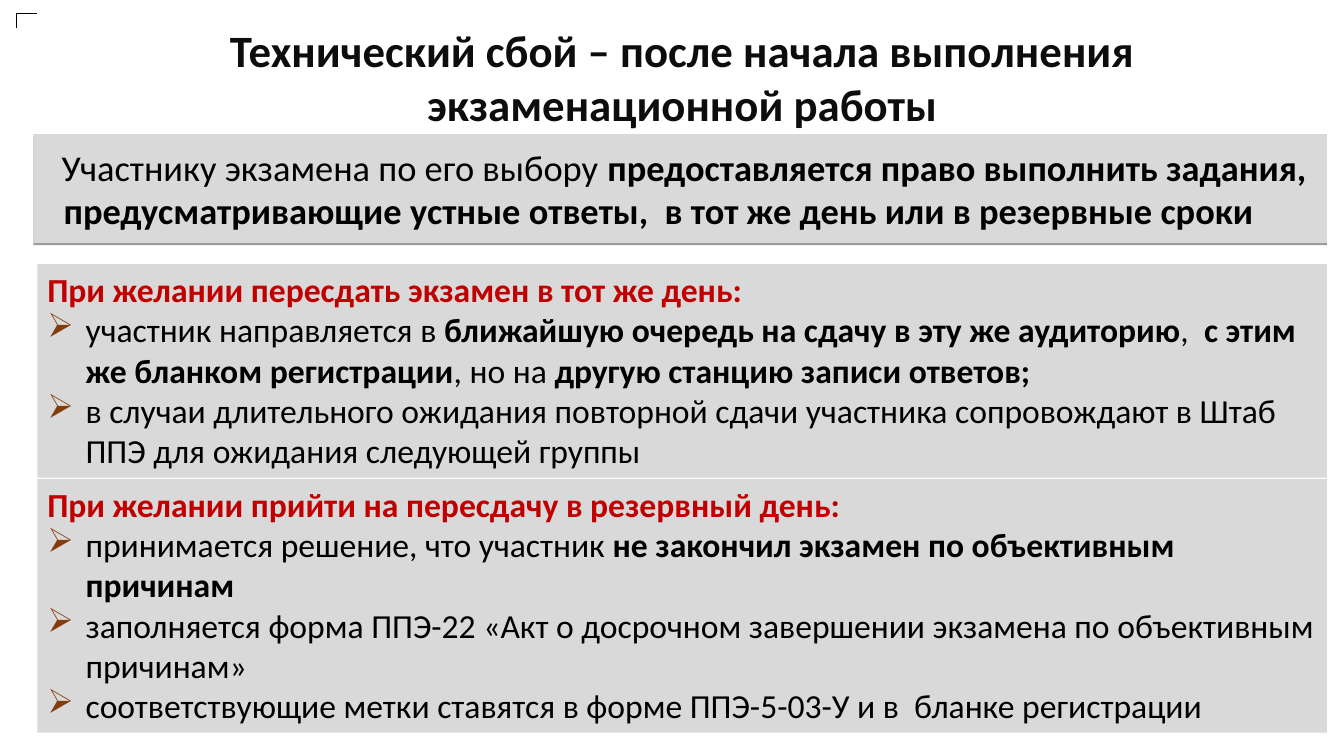
from dataclasses import dataclass

from lxml import etree
from pptx import Presentation
from pptx.dml.color import RGBColor
from pptx.enum.shapes import MSO_CONNECTOR, MSO_SHAPE
from pptx.enum.text import MSO_ANCHOR, MSO_AUTO_SIZE, PP_ALIGN
from pptx.oxml.ns import qn
from pptx.util import Inches, Pt

RECTANGLE = MSO_SHAPE.RECTANGLE
STRAIGHT = MSO_CONNECTOR.STRAIGHT
LEFT, CENTER = PP_ALIGN.LEFT, PP_ALIGN.CENTER
TOP, MIDDLE = MSO_ANCHOR.TOP, MSO_ANCHOR.MIDDLE
FIT_SHAPE = MSO_AUTO_SIZE.SHAPE_TO_FIT_TEXT
NO_FIT = MSO_AUTO_SIZE.NONE
TITLE_ONLY = 5
WIDTH, HEIGHT = Inches(13.33), Inches(7.5)


@dataclass(frozen=True)
class Theme:
    font: str = "Calibri"
    title_size: int = 32
    banner_size: int = 26
    body_size: int = 24
    title: str = "0D0D0D"
    text: str = "000000"
    heading: str = "C00000"
    bullet: str = "843C0B"
    panel: str = "D9D9D9"


THEME = Theme()

TITLE = "Технический сбой – после начала выполнения экзаменационной работы"
BANNER = (
    "Участнику экзамена по его выбору **предоставляется право выполнить задания, "
    "предусматривающие устные ответы,  в тот же день или в резервные сроки"
)
PANELS = [
    (34.93, 28.27, "При желании пересдать экзамен в тот же день:", [
        "участник направляется в **ближайшую очередь на сдачу в эту же аудиторию**,  "
        "**с этим же бланком регистрации**, но на **другую станцию записи ответов;",
        "в случаи длительного ожидания повторной сдачи участника сопровождают "
        "в Штаб ППЭ для ожидания следующей группы",
    ]),
    (63.33, 33.6, "При желании прийти на пересдачу в резервный день:", [
        "принимается решение, что участник **не закончил экзамен по объективным причинам",
        "заполняется форма ППЭ-22 «Акт о досрочном завершении экзамена "
        "по объективным причинам»",
        "соответствующие метки ставятся в форме ППЭ-5-03-У и в  бланке регистрации",
    ]),
]


def across(percent):
    return round(WIDTH * percent / 100)


def down(percent):
    return round(HEIGHT * percent / 100)


def write(para, marked_text, size, color, align=LEFT):
    para.alignment = align
    for index, part in enumerate(marked_text.split("**")):
        if not part:
            continue
        span = para.add_run()
        span.text = part
        span.font.name = THEME.font
        span.font.size = Pt(size)
        span.font.bold = index % 2 == 1
        span.font.color.rgb = RGBColor.from_string(color)


def indent(para, margin, first_line):
    properties = para._p.get_or_add_pPr()
    properties.set("marL", str(Inches(margin)))
    properties.set("indent", str(Inches(first_line)))
    return properties


def add_bullet(para):
    properties = indent(para, 0.38, -0.38)
    color = etree.SubElement(properties, qn("a:buClr"))
    etree.SubElement(color, qn("a:srgbClr"), val=THEME.bullet)
    etree.SubElement(properties, qn("a:buChar"), char="➢")


def add_title(page):
    title = page.shapes.title
    title.left, title.top = across(5.1), down(2.4)
    title.width, title.height = across(91.37), down(15.73)
    frame = title.text_frame
    frame.word_wrap = True
    frame.auto_size = NO_FIT
    frame.vertical_anchor = TOP
    write(frame.paragraphs[0], "**" + TITLE, THEME.title_size, THEME.title, CENTER)


def add_box(page, left, top, width, height, anchor):
    box = page.shapes.add_shape(
        RECTANGLE, across(left), down(top), across(width), down(height))
    box.shadow.inherit = False
    box.fill.solid()
    box.fill.fore_color.rgb = RGBColor.from_string(THEME.panel)
    box.line.fill.background()
    box.text_frame.word_wrap = True
    box.text_frame.vertical_anchor = anchor
    return box


def add_shadow(box):
    effects = box._element.spPr.find(qn("a:effectLst"))
    shadow = etree.SubElement(
        effects, qn("a:outerShdw"), blurRad="0", dist=str(Pt(1.6)),
        dir="5400000", rotWithShape="0")
    color = etree.SubElement(shadow, qn("a:srgbClr"), val=THEME.text)
    etree.SubElement(color, qn("a:alpha"), val="38000")


def add_banner(page):
    box = add_box(page, 2.48, 17.73, 96.25, 14.4, MIDDLE)
    add_shadow(box)
    frame = box.text_frame
    frame.margin_left = frame.margin_right = Inches(0.11)
    frame.margin_top = frame.margin_bottom = Inches(0.06)
    para = frame.paragraphs[0]
    write(para, BANNER, THEME.banner_size, THEME.text)
    indent(para, 0.19, -0.02)


def add_panel(page, top, height, heading, items):
    box = add_box(page, 2.78, top, 95.95, height, TOP)
    frame = box.text_frame
    frame.auto_size = FIT_SHAPE
    write(frame.paragraphs[0], "**" + heading, THEME.body_size, THEME.heading)
    for item in items:
        para = frame.add_paragraph()
        write(para, item, THEME.body_size, THEME.text)
        add_bullet(para)


def add_corner_line(page, end_x, end_y):
    line = page.shapes.add_connector(
        STRAIGHT, across(1.2), down(1.73), across(end_x), down(end_y))
    line.line.color.rgb = RGBColor.from_string(THEME.text)
    line.line.width = Pt(0.75)
    etree.SubElement(line._element.spPr, qn("a:effectLst"))


def main():
    deck = Presentation()
    deck.slide_width, deck.slide_height = WIDTH, HEIGHT
    page = deck.slides.add_slide(deck.slide_layouts[TITLE_ONLY])
    add_corner_line(page, 1.2, 3.73)
    add_corner_line(page, 2.78, 1.73)
    add_title(page)
    add_banner(page)
    for panel in PANELS:
        add_panel(page, *panel)
    deck.save("out.pptx")


if __name__ == "__main__":
    main()
